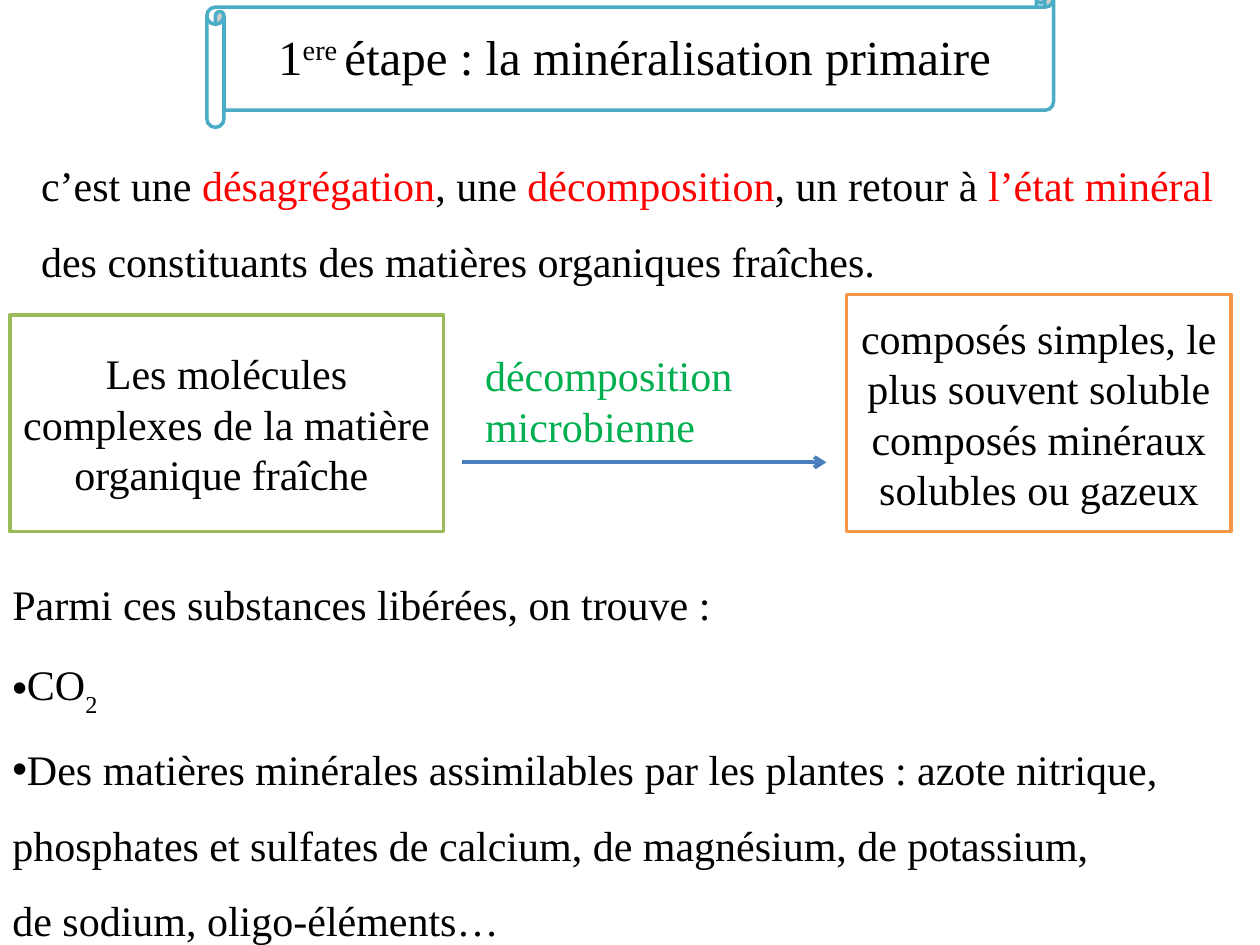
from dataclasses import dataclass
from typing import NamedTuple

from lxml.etree import SubElement
from pptx import Presentation
from pptx.dml.color import RGBColor
from pptx.enum.shapes import MSO_CONNECTOR as Connector, MSO_SHAPE as Shape
from pptx.enum.text import MSO_ANCHOR as Anchor, MSO_AUTO_SIZE as AutoSize, PP_ALIGN as Align
from pptx.oxml.ns import qn
from pptx.util import Cm, Pt

FONT = "Times New Roman"
BLACK, WHITE, RED, GREEN = "000000", "FFFFFF", "FF0000", "00B050"


class Box(NamedTuple):
    """Left, top, width and height in centimetres."""
    left: float
    top: float
    width: float
    height: float

    def lengths(self) -> list:
        return [Cm(value) for value in self]


@dataclass
class Span:
    text: str
    color: str = BLACK
    baseline: int = 0  # percent: above zero raises, below zero lowers


@dataclass
class Line:
    spans: list[Span]
    bullet: bool = False


@dataclass
class TextBlock:
    box: Box
    lines: list[Line]
    size: int = 24
    spacing: float = 1.0
    wrap: bool = False
    anchor: Anchor = Anchor.TOP


@dataclass
class Panel:
    box: Box
    outline: str
    text: str = ""
    shape: Shape = Shape.RECTANGLE


def rgb(color: str) -> RGBColor:
    return RGBColor.from_string(color)


def write_line(paragraph, line: Line, size: int, spacing: float = 1.0) -> None:
    paragraph.line_spacing = spacing
    if line.bullet:
        properties = paragraph._p.get_or_add_pPr()
        properties.set("marL", "0")
        properties.set("indent", "0")
        SubElement(properties, qn("a:buFont"), typeface="Arial")
        SubElement(properties, qn("a:buChar"), char="•")
    for span in line.spans:
        run = paragraph.add_run()
        run.text = span.text
        run.font.name = FONT
        run.font.size = Pt(size)
        run.font.color.rgb = rgb(span.color)
        if span.baseline:
            run._r.get_or_add_rPr().set("baseline", str(span.baseline * 1000))


def draw_text(slide, block: TextBlock) -> None:
    frame = slide.shapes.add_textbox(*block.box.lengths()).text_frame
    frame.word_wrap = block.wrap
    frame.auto_size = AutoSize.SHAPE_TO_FIT_TEXT
    frame.vertical_anchor = block.anchor
    for index, line in enumerate(block.lines):
        paragraph = frame.add_paragraph() if index else frame.paragraphs[0]
        write_line(paragraph, line, block.size, block.spacing)


def draw_panel(slide, panel: Panel) -> None:
    outline = slide.shapes.add_shape(panel.shape, *panel.box.lengths())
    outline.shadow.inherit = False
    outline.fill.solid()
    outline.fill.fore_color.rgb = rgb(WHITE)
    outline.line.color.rgb = rgb(panel.outline)
    outline.line.width = Pt(2)
    if panel.text:
        frame = outline.text_frame
        frame.word_wrap = True
        frame.vertical_anchor = Anchor.MIDDLE
        frame.paragraphs[0].alignment = Align.CENTER
        write_line(frame.paragraphs[0], Line([Span(panel.text)]), 24)


def draw_arrow(slide, start: float, end: float, y: float, color: str) -> None:
    arrow = slide.shapes.add_connector(Connector.STRAIGHT, Cm(start), Cm(y), Cm(end), Cm(y))
    arrow.line.color.rgb = rgb(color)
    arrow.line.width = Pt(2.25)
    SubElement(arrow.line._get_or_add_ln(), qn("a:tailEnd"), type="arrow")
    SubElement(arrow._element.spPr, qn("a:effectLst"))


# Title banner
BANNER = Panel(Box(4.17, -0.2, 17.07, 2.77), "4BACC6", shape=Shape.HORIZONTAL_SCROLL)
TITLE = TextBlock(Box(5.36, 0.41, 15.39, 1.45), [
    Line([Span("1"), Span("ere ", baseline=30), Span("étape : la minéralisation primaire ")]),
], size=28)

# Definition
DEFINITION = TextBlock(Box(0.58, 2.59, 24.21, 3.33), [
    Line([
        Span("c’est une "), Span("désagrégation", RED),
        Span(", une "), Span("décomposition", RED),
        Span(", un retour à "), Span("l’état minéral ", RED),
        Span("des constituants des matières organiques fraîches."),
    ]),
], spacing=1.5, wrap=True)

# Reaction: fresh matter -> simple compounds
FRESH_MATTER = Panel(Box(0.2, 6.35, 8.74, 4.37), "9BBB59",
                     "Les molécules complexes de la matière organique fraîche ")
COMPOUNDS = Panel(Box(17.07, 5.94, 7.75, 4.78), "F79646",
                  "composés simples, le plus souvent soluble "
                  "composés minéraux solubles ou gazeux")
PROCESS = TextBlock(Box(9.53, 6.93, 5.77, 2.31), [
    Line([Span("décomposition", GREEN)]),
    Line([Span("microbienne ", GREEN)]),
])

# Released substances
SUBSTANCES = TextBlock(Box(0, 11.13, 24.03, 7.95), [
    Line([Span("Parmi ces substances libérées, on trouve :")]),
    Line([Span("CO"), Span("2", baseline=-30)], bullet=True),
    Line([Span("Des matières minérales assimilables par les plantes : azote nitrique,")], bullet=True),
    Line([Span("phosphates et sulfates de calcium, de magnésium, de potassium,")]),
    Line([Span("de sodium, oligo-éléments…")]),
], spacing=1.5, anchor=Anchor.MIDDLE)


def main() -> None:
    deck = Presentation()
    deck.slide_width, deck.slide_height = Cm(25.4), Cm(19.05)
    slide = deck.slides.add_slide(deck.slide_layouts[6])

    draw_panel(slide, BANNER)
    draw_text(slide, TITLE)
    draw_text(slide, DEFINITION)
    draw_panel(slide, FRESH_MATTER)
    draw_arrow(slide, 9.32, 16.66, 9.32, "4B7EBC")
    draw_text(slide, PROCESS)
    draw_panel(slide, COMPOUNDS)
    draw_text(slide, SUBSTANCES)

    deck.save("out.pptx")


if __name__ == "__main__":
    main()
